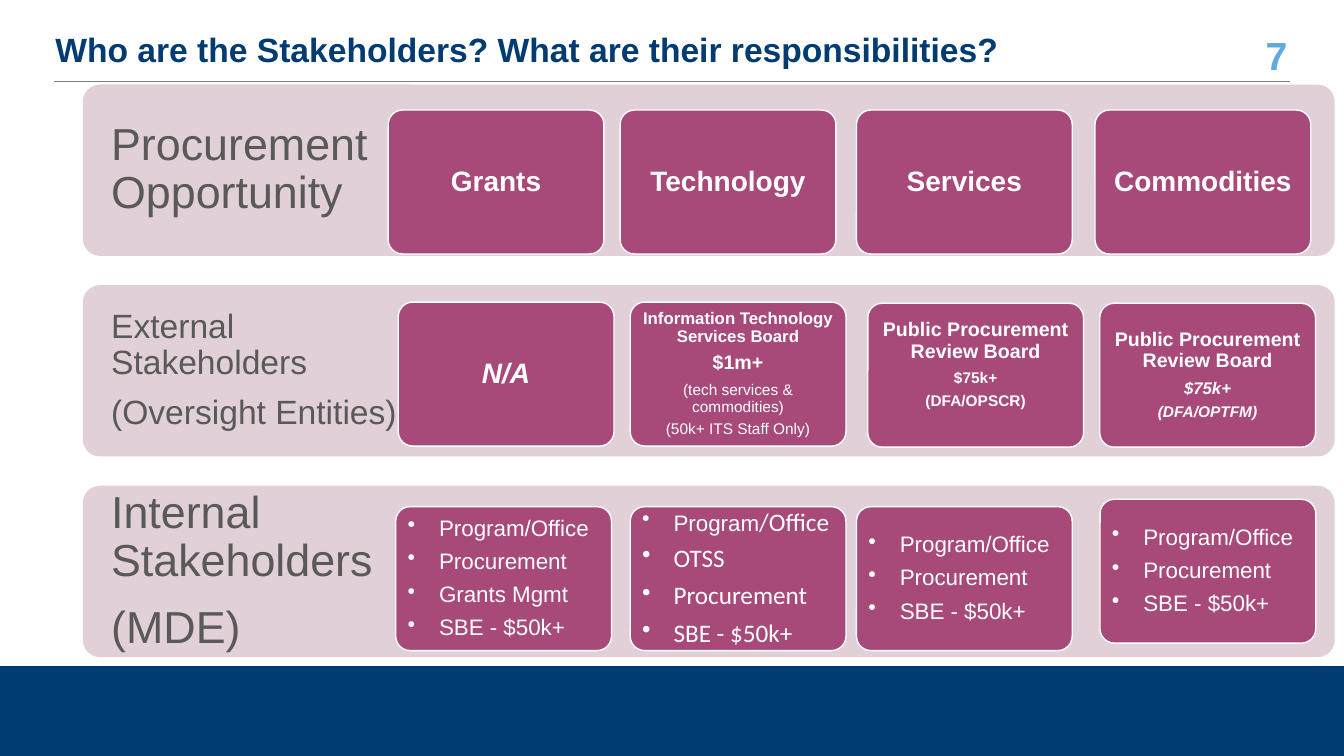
from lxml import etree
from pptx import Presentation
from pptx.dml.color import RGBColor
from pptx.enum.shapes import MSO_CONNECTOR, MSO_SHAPE
from pptx.enum.text import MSO_ANCHOR, PP_ALIGN
from pptx.oxml.ns import qn
from pptx.util import Pt

LEFT, CENTER, RIGHT = PP_ALIGN.LEFT, PP_ALIGN.CENTER, PP_ALIGN.RIGHT
MIDDLE = MSO_ANCHOR.MIDDLE
RECTANGLE, ROUNDED = MSO_SHAPE.RECTANGLE, MSO_SHAPE.ROUNDED_RECTANGLE

THEME = {
    "navy": RGBColor.from_string("003B71"),
    "sky": RGBColor.from_string("5FAADE"),
    "rule": RGBColor.from_string("808080"),
    "band": RGBColor.from_string("E1D0D7"),
    "card": RGBColor.from_string("A74979"),
    "grey": RGBColor.from_string("595959"),
    "white": RGBColor.from_string("FFFFFF"),
    "huge": 32, "number": 28, "title": 24, "heading": 20, "large": 18,
    "body": 16, "board": 14, "small": 12, "tiny": 11,
}


def write(frame, text, size="body", color="white", font="Arial", bold=False,
          italic=False, align=CENTER, bullet=False, joined=False, spacing=0.9):
    paragraph = frame.paragraphs[-1]
    if paragraph.runs and not joined:
        paragraph = frame.add_paragraph()
    if not joined:
        if bullet:
            properties = paragraph._p.get_or_add_pPr()
            properties.set("marL", str(Pt(22.5)))
            properties.set("indent", str(Pt(-22.5)))
            etree.SubElement(properties, qn("a:buChar"), char="•")
        paragraph.alignment = LEFT if bullet else align
        paragraph.line_spacing = spacing
        paragraph.space_after = Pt(round(THEME[size] * 0.4, 1))
    run = paragraph.add_run()
    run.text = text
    run.font.name = font
    run.font.size = Pt(THEME[size])
    run.font.bold = bold
    run.font.italic = italic
    run.font.color.rgb = THEME[color]


def add_block(kind, left, top, width, height, fill, outline=None, margin=0):
    block = slide.shapes.add_shape(kind, Pt(left), Pt(top), Pt(width), Pt(height))
    block.shadow.inherit = False
    block.fill.solid()
    block.fill.fore_color.rgb = THEME[fill]
    if outline:
        block.line.color.rgb = THEME[outline]
        block.line.width = Pt(1)
    else:
        block.line.fill.background()
    if kind == ROUNDED:
        block.adjustments[0] = 0.1
    frame = block.text_frame
    frame.word_wrap = True
    frame.vertical_anchor = MIDDLE
    frame.margin_left = frame.margin_right = Pt(margin)
    frame.margin_top = frame.margin_bottom = Pt(margin)
    return frame


presentation = Presentation()
presentation.slide_width, presentation.slide_height = Pt(960), Pt(540)
slide = presentation.slides.add_slide(presentation.slide_layouts[5])

heading = slide.shapes.title
heading.left, heading.top, heading.width, heading.height = Pt(32.4), Pt(21.6), Pt(835), Pt(30)
heading.text_frame.vertical_anchor = MIDDLE
heading.text_frame.word_wrap = True
write(heading.text_frame, "Who are the Stakeholders? What are their responsibilities?",
      size="title", color="navy", bold=True, align=LEFT)

add_block(RECTANGLE, 0, 475.8, 960, 64.2, "navy")

page_number = slide.shapes.add_textbox(Pt(869), Pt(24), Pt(57.6), Pt(30)).text_frame
page_number.word_wrap = True
page_number.vertical_anchor = MIDDLE
write(page_number, "7", size="number", color="sky", bold=True, align=RIGHT, spacing=1.0)

title_rule = slide.shapes.add_connector(MSO_CONNECTOR.STRAIGHT, Pt(921.6), Pt(58), Pt(38.6), Pt(58))
title_rule.line.color.rgb = THEME["rule"]
title_rule.line.width = Pt(0.5)
etree.SubElement(title_rule._element.spPr, qn("a:effectLst"))

bands = [
    ("huge", ["Procurement Opportunity"]),
    ("title", ["External Stakeholders", "(Oversight Entities)"]),
    ("huge", ["Internal Stakeholders", "(MDE)"]),
]
for row, (size, labels) in enumerate(bands):
    band = add_block(ROUNDED, 59.2, 60.4 + 143.3 * row, 894.2, 122.4, "band", margin=16.6)
    band.margin_right = Pt(642)
    for label in labels:
        write(band, label, size=size, color="grey", align=LEFT)

HEADING = {"size": "heading", "bold": True}
BOARD = {"size": "board", "bold": True}
DETAIL = {"size": "tiny", "bold": True}
NOTE = {"size": "tiny"}
ITEM = {"bullet": True}
CALIBRI = {"bullet": True, "size": "large", "font": "Calibri"}

short_list = [("Program/Office", ITEM), ("Procurement", ITEM), ("SBE - $50k+", ITEM)]
cards = [
    (277.3, 78.6, [("Grants", HEADING)]),
    (443, 78.6, [("Technology", HEADING)]),
    (611.8, 78.6, [("Services", HEADING)]),
    (782.2, 78.6, [("Commodities", HEADING)]),
    (284.5, 215.8, [("N/A", {**HEADING, "italic": True})]),
    (450.2, 215.8, [
        ("Information Technology Services Board", {"size": "small", "bold": True}),
        ("$1m+", BOARD),
        ("(tech services & commodities)", NOTE),
        ("(50k+ ITS Staff Only)", NOTE)]),
    (619.9, 216.6, [
        ("Public Procurement Review Board", BOARD),
        ("$75k+", DETAIL),
        ("(DFA/OPSCR)", DETAIL)]),
    (785.6, 216.6, [
        ("Public Procurement Review Board", BOARD),
        ("$75k+", {"size": "small", "bold": True, "italic": True}),
        ("(DFA/OPTFM)", {**DETAIL, "italic": True})]),
    (282.7, 361.9, short_list[:2] + [("Grants Mgmt", ITEM)] + short_list[2:]),
    (450.2, 361.9, [
        ("Program", ITEM),
        ("/Office", {**CALIBRI, "joined": True}),
        ("OTSS", CALIBRI),
        ("Procurement", CALIBRI),
        ("SBE - $50k+", CALIBRI)]),
    (611.8, 361.9, short_list),
    (785.8, 356.6, short_list),
]
for left, top, lines in cards:
    card = add_block(ROUNDED, left, top, 154.1, 102.8, "card", outline="white", margin=5.4)
    for text, style in lines:
        write(card, text, **style)
    if text == "(DFA/OPSCR)":
        card.margin_bottom = Pt(20.2)

presentation.save("out.pptx")
